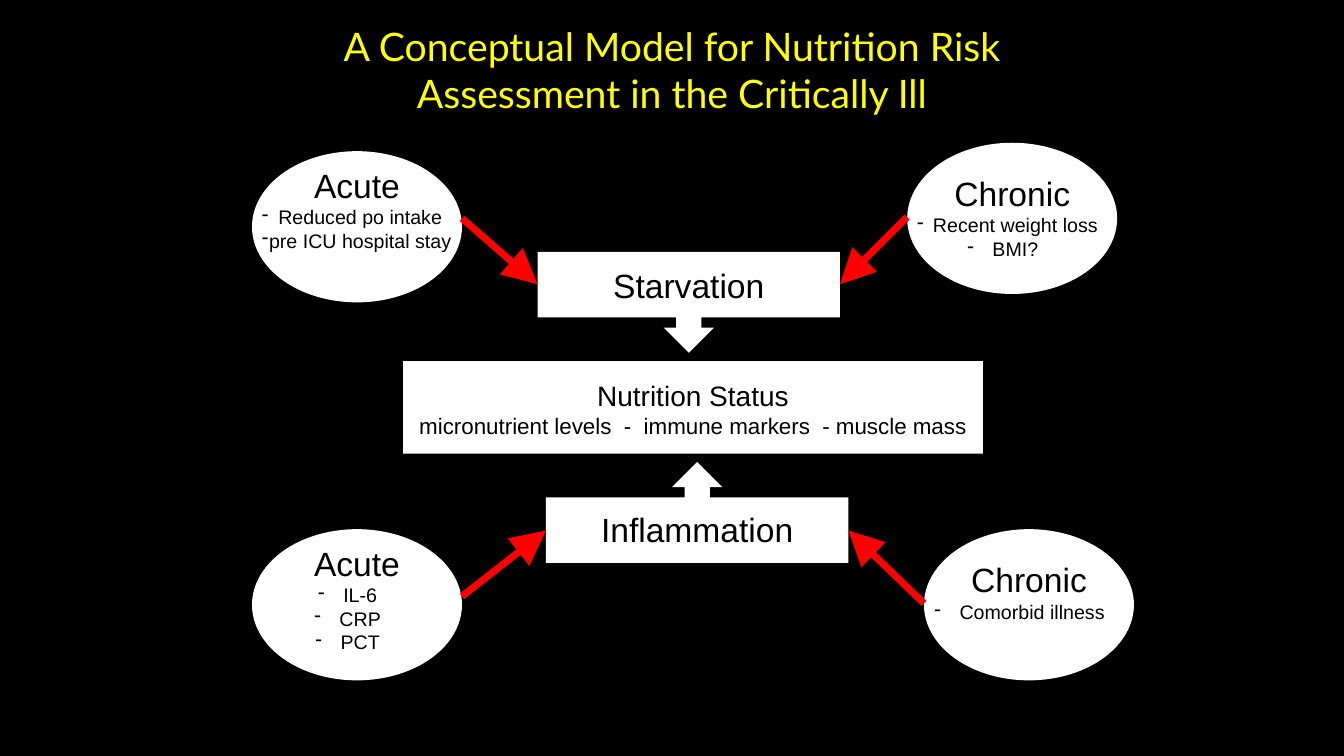
"""Build a one-slide diagram of nutrition risk assessment in the critically ill."""
from lxml import etree
from pptx import Presentation
from pptx.dml.color import RGBColor
from pptx.enum.shapes import MSO_CONNECTOR, MSO_SHAPE
from pptx.enum.text import MSO_ANCHOR, MSO_AUTO_SIZE, PP_ALIGN
from pptx.oxml.ns import qn
from pptx.util import Pt

CENTER = PP_ALIGN.CENTER
TOP = MSO_ANCHOR.TOP
NO_AUTOFIT = MSO_AUTO_SIZE.NONE
STRAIGHT = MSO_CONNECTOR.STRAIGHT
OVAL = MSO_SHAPE.OVAL
RECTANGLE = MSO_SHAPE.RECTANGLE
CALLOUT = MSO_SHAPE.DOWN_ARROW_CALLOUT
BLACK, WHITE, RED, YELLOW = "000000", "FFFFFF", "FF0000", "FFFF00"


def color(value):
    return RGBColor.from_string(value)


deck = Presentation()
deck.slide_width, deck.slide_height = Pt(960), Pt(540)
page = deck.slides.add_slide(deck.slide_layouts[5])
page.background.fill.solid()
page.background.fill.fore_color.rgb = color(BLACK)

title = page.shapes.title
title.left, title.top, title.width, title.height = Pt(174), Pt(12), Pt(612), Pt(90)
title.text_frame.text = "A Conceptual Model for Nutrition Risk Assessment in the Critically Ill"
title.text_frame.auto_size = NO_AUTOFIT
title.text_frame.vertical_anchor = TOP
title_para = title.text_frame.paragraphs[0]
title_para.alignment = CENTER
title_font = title_para.runs[0].font
title_font.name, title_font.size = "Lato", Pt(28)
title_font.color.rgb = color(YELLOW)

panels = [
    (CALLOUT, 384, 180, 216, 72, 0),
    (CALLOUT, 390, 330, 216, 72, 180),
    (RECTANGLE, 288, 258, 414, 66, 0),
    (OVAL, 180, 108, 150, 108, 0),
    (OVAL, 648, 102, 150, 108, 0),
    (OVAL, 180, 378, 150, 108, 0),
    (OVAL, 660, 378, 150, 108, 0),
]
for kind, left, top, width, height, rotation in panels:
    panel = page.shapes.add_shape(kind, Pt(left), Pt(top), Pt(width), Pt(height))
    panel.shadow.inherit = False
    panel.rotation = rotation
    panel.fill.solid()
    panel.fill.fore_color.rgb = color(WHITE)
    panel.line.fill.background()
    if kind == CALLOUT:
        for index, ratio in enumerate((0.25, 0.25, 0.25, 0.65)):
            panel.adjustments[index] = ratio

labels = [
    (402, 186, 180, 36, 24, 14, False, ["Starvation"]),
    (420, 360, 156, 36, 24, 14, False, ["Inflammation"]),
    (288, 267, 414, 51, 20, 16, False,
     ["Nutrition Status", "micronutrient levels  -  immune markers  - muscle mass"]),
    (180, 114, 150, 85, 24, 14, True, ["Acute", "Reduced po intake", "pre ICU hospital stay"]),
    (648, 120, 150, 70, 24, 14, True, ["Chronic", "Recent weight loss", "BMI?"]),
    (180, 384, 150, 101, 24, 14, True, ["Acute", "IL-6", "CRP", "PCT"]),
    (660, 396, 150, 53, 24, 14, True, ["Chronic", "Comorbid illness"]),
]
for left, top, width, height, head_size, body_size, bulleted, lines in labels:
    box = page.shapes.add_textbox(Pt(left), Pt(top), Pt(width), Pt(height))
    box.text_frame.word_wrap = True
    box.text_frame.text = "\n".join(lines)
    for index, para in enumerate(box.text_frame.paragraphs):
        para.alignment = CENTER
        font = para.runs[0].font
        font.name = "Arial"
        font.size = Pt(body_size if index else head_size)
        font.color.rgb = color(BLACK)
        if bulleted and index:
            properties = para._p.get_or_add_pPr()
            properties.set("marL", "0")
            properties.set("indent", str(-Pt(18)))
            etree.SubElement(properties, qn("a:buFontTx"))
            etree.SubElement(properties, qn("a:buChar"), char="-")

arrows = [
    (330, 156, 384, 203),
    (648, 155, 600, 203),
    (330, 426, 390, 379),
    (660, 431, 606, 379),
]
for start_x, start_y, end_x, end_y in arrows:
    arrow = page.shapes.add_connector(STRAIGHT, Pt(start_x), Pt(start_y), Pt(end_x), Pt(end_y))
    arrow.line.color.rgb = color(RED)
    arrow.line.width = Pt(5)
    etree.SubElement(arrow.line._get_or_add_ln(), qn("a:tailEnd"), type="triangle", w="lg", len="lg")
    etree.SubElement(arrow._element.spPr, qn("a:effectLst"))

deck.save("out.pptx")
